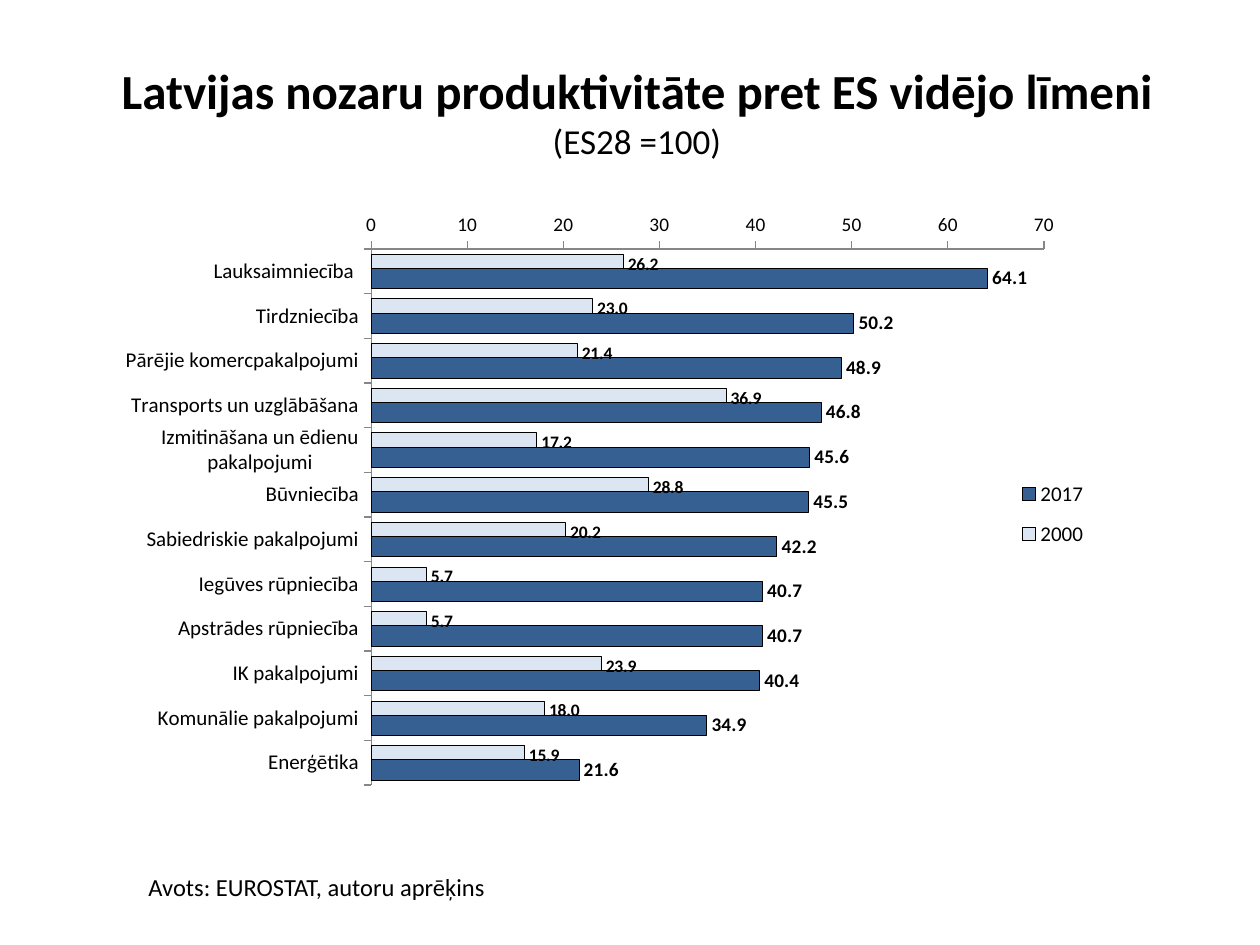
import pptx
import pptx.chart.data
import pptx.dml.color
import pptx.enum.chart
import pptx.enum.text
import pptx.oxml
import pptx.oxml.ns
import pptx.util
from pptx.util import Inches

BLACK = "000000"


def color(hex_value):
    return pptx.dml.color.RGBColor.from_string(hex_value)


def style(font, size, bold=False):
    for attribute, value in {"name": "Calibri", "size": pptx.util.Pt(size), "bold": bold}.items():
        setattr(font, attribute, value)
    font.color.rgb = color(BLACK)


presentation = pptx.Presentation()
presentation.slide_width, presentation.slide_height = Inches(10), Inches(7.5)
slide = presentation.slides.add_slide(presentation.slide_layouts[5])

# Title with the index base on a second line
heading = slide.shapes.title
heading.left, heading.top = Inches(0.6), Inches(0.3)
heading.width, heading.height = Inches(8.91), Inches(1.16)
heading.text_frame.vertical_anchor = pptx.enum.text.MSO_ANCHOR.MIDDLE
heading_line = heading.text_frame.paragraphs[0]
heading_line.alignment = pptx.enum.text.PP_ALIGN.CENTER
subject = heading_line.add_run()
subject.text = "Latvijas nozaru produktivitāte pret ES vidējo līmeni"
style(subject.font, 28, True)
heading_line.add_line_break()
index_base = heading_line.add_run()
index_base.text = "(ES28 =100)"
style(index_base.font, 20)

# Productivity by sector: 2000, 2017
sectors = {
    "Lauksaimniecība ": (26.2, 64.1),
    "Tirdzniecība": (23.0, 50.2),
    "Pārējie komercpakalpojumi": (21.4, 48.9),
    "Transports un uzglābāšana": (36.9, 46.8),
    "Izmitināšana un ēdienu pakalpojumi": (17.2, 45.6),
    "Būvniecība": (28.8, 45.5),
    "Sabiedriskie pakalpojumi": (20.2, 42.2),
    "Iegūves rūpniecība": (5.7, 40.7),
    "Apstrādes rūpniecība": (5.7, 40.7),
    "IK pakalpojumi": (23.9, 40.4),
    "Komunālie pakalpojumi": (18.0, 34.9),
    "Enerģētika": (15.9, 21.6),
}
productivity = pptx.chart.data.CategoryChartData(number_format="0.0")
productivity.categories = list(sectors)
for year, values in zip(("2000", "2017"), zip(*sectors.values())):
    productivity.add_series(year, values)
chart = slide.shapes.add_chart(
    pptx.enum.chart.XL_CHART_TYPE.BAR_CLUSTERED,
    Inches(0.89), Inches(1.69), Inches(8.03), Inches(4.77), productivity,
).chart
style(chart.font, 10)
chart.has_title = False

# Bars and value labels
bars = chart.plots[0]
bars.gap_width, bars.overlap, bars.vary_by_categories = 50, 30, False
for series, fill, label_size in zip(bars.series, ("DCE6F2", "376092"), (10, 11)):
    series.format.fill.solid()
    series.format.fill.fore_color.rgb = color(fill)
    series.format.line.color.rgb = color(BLACK)
    series.format.line.width = pptx.util.Pt(0.25)
    labels = series.data_labels
    label_format = {
        "show_value": True,
        "number_format": "0.0",
        "number_format_is_linked": False,
        "position": pptx.enum.chart.XL_LABEL_POSITION.OUTSIDE_END,
    }
    for attribute, value in label_format.items():
        setattr(labels, attribute, value)
    style(labels.font, label_size, True)

# Axes: first sector at the top, scale above it
sector_axis, scale = chart.category_axis, chart.value_axis
sector_axis.reverse_order = True
scale.minimum_scale, scale.maximum_scale, scale.major_unit = 0, 70, 10
scale.tick_labels.number_format = "0"
scale.tick_labels.number_format_is_linked = False
for axis, size in ((sector_axis, 12), (scale, 11)):
    axis.has_major_gridlines = False
    axis.major_tick_mark = pptx.enum.chart.XL_TICK_MARK.OUTSIDE
    axis.minor_tick_mark = pptx.enum.chart.XL_TICK_MARK.NONE
    axis.format.line.color.rgb = color("868686")
    axis.format.line.width = pptx.util.Pt(0.75)
    style(axis.tick_labels.font, size)

# Legend
chart.has_legend = True
legend = chart.legend
legend.position = pptx.enum.chart.XL_LEGEND_POSITION.RIGHT
legend.include_in_layout = False
style(legend.font, 12)

# Places of the plot and the legend, as fractions of the chart
plot_area = chart._chartSpace.chart.plotArea
for old_layout in plot_area.findall(pptx.oxml.ns.qn("c:layout")):
    plot_area.remove(old_layout)
for owner, index, target, place in (
    (plot_area, 0, '<c:layoutTarget val="inner"/>', (0.256, 0.058, 0.665, 0.894)),
    (legend._element, 1, "", (0.89, 0.42, 0.08, 0.16)),
):
    for old_layout in owner.findall(pptx.oxml.ns.qn("c:layout")):
        owner.remove(old_layout)
    modes = '<c:xMode val="edge"/><c:yMode val="edge"/>'
    sides = "".join(f'<c:{side} val="{part}"/>' for side, part in zip("xywh", place))
    owner.insert(index, pptx.oxml.parse_xml(
        f'<c:layout {pptx.oxml.ns.nsdecls("c")}><c:manualLayout>'
        f"{target}{modes}{sides}</c:manualLayout></c:layout>"
    ))

# Source note
note = slide.shapes.add_textbox(Inches(1.08), Inches(6.87), Inches(2.9), Inches(0.34)).text_frame
note.word_wrap = False
note.auto_size = pptx.enum.text.MSO_AUTO_SIZE.SHAPE_TO_FIT_TEXT
citation = note.paragraphs[0].add_run()
citation.text = "Avots: EUROSTAT, autoru aprēķins"
style(citation.font, 14)

presentation.save("out.pptx")
